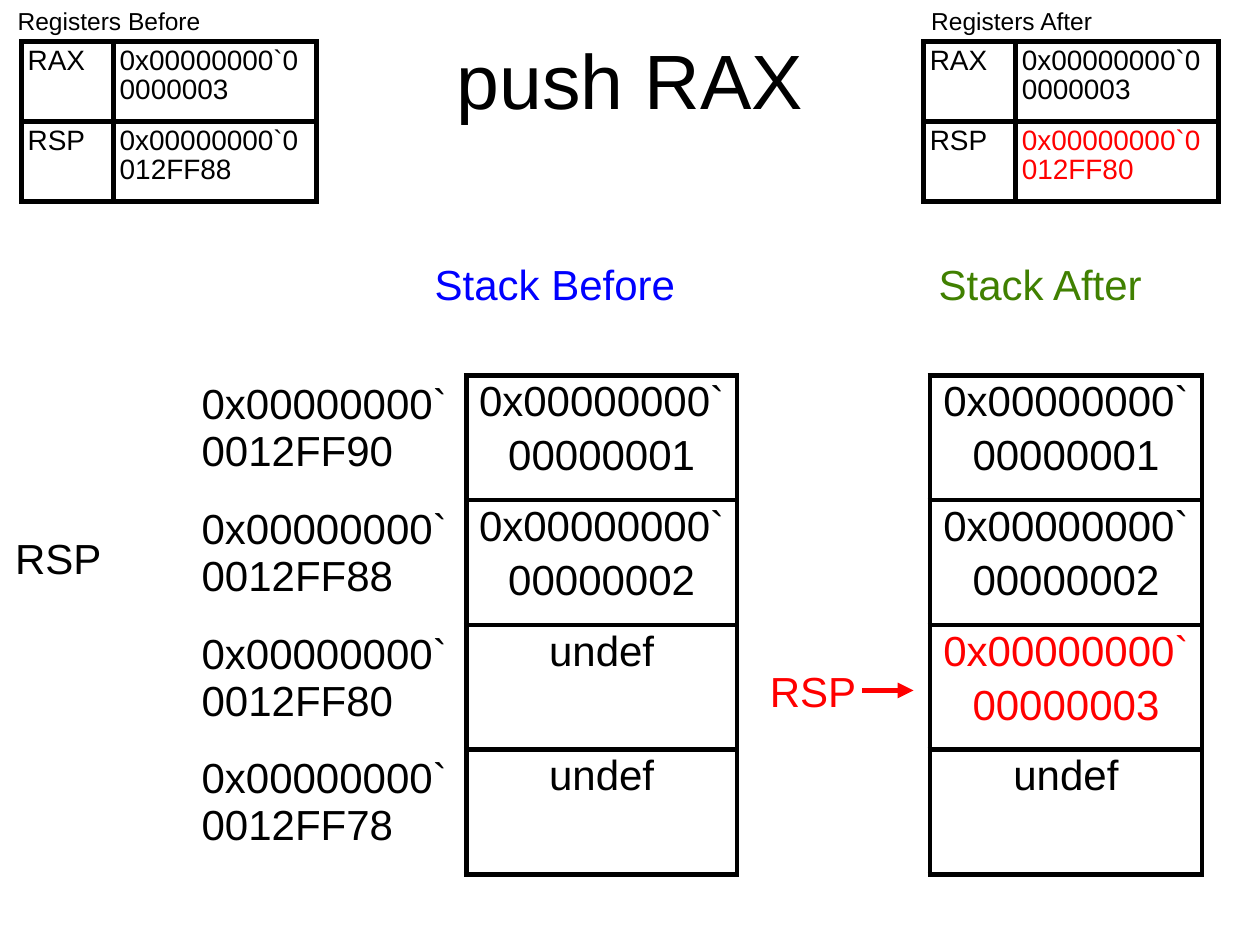
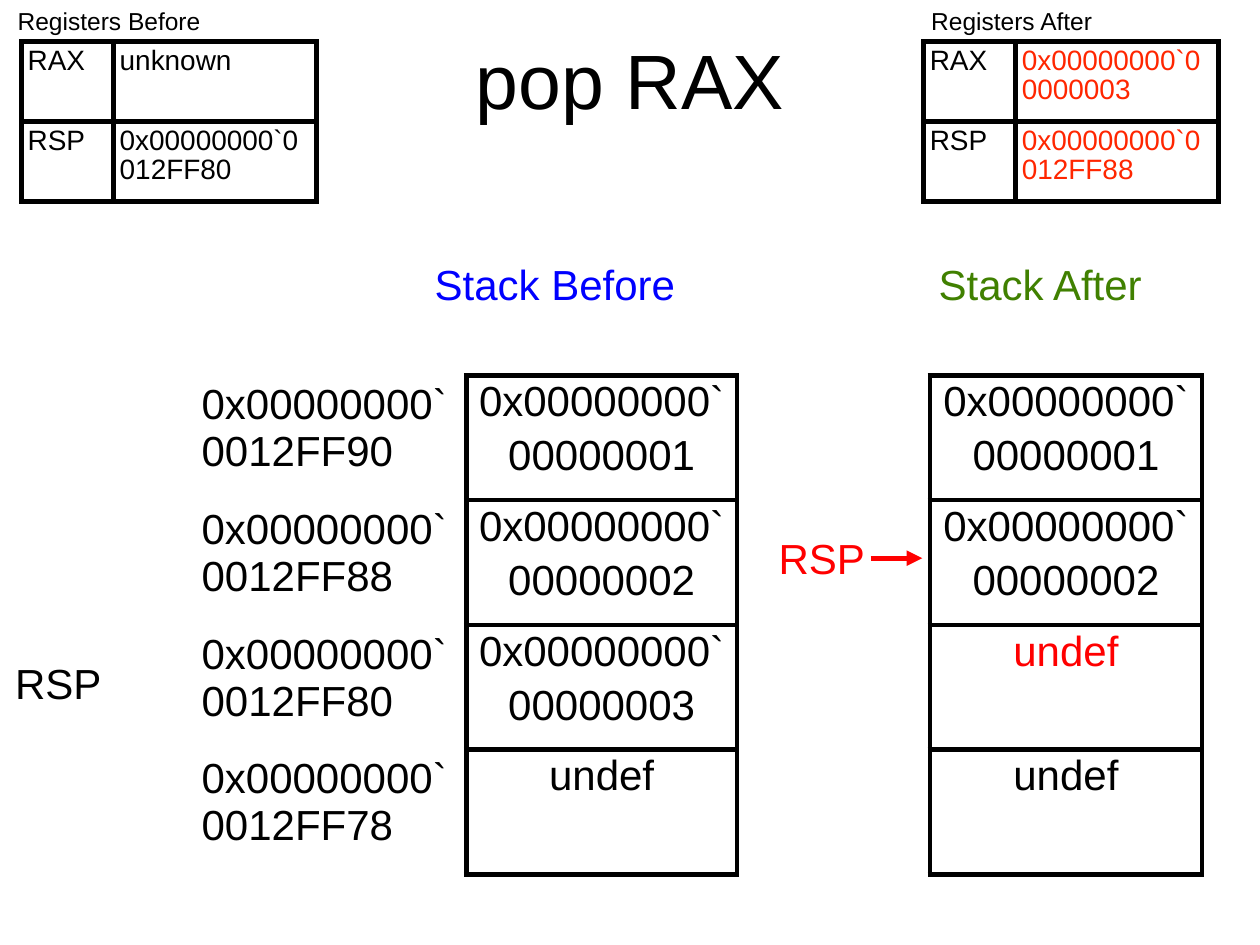
from lxml import etree
from pptx import Presentation
from pptx import util as u
from pptx.dml.color import RGBColor
from pptx.enum import shapes, text
from pptx.oxml.ns import qn

BLACK = RGBColor(0x00, 0x00, 0x00)
BLUE = RGBColor(0x00, 0x00, 0xFF)
GREEN = RGBColor(0x40, 0x80, 0x00)
RED = RGBColor(0xFF, 0x00, 0x00)
SCARLET = RGBColor(0xFF, 0x26, 0x00)
FONT = "Arial"
PAD = u.Inches(0.05)
LINE = u.Pt(3)
LEFT, MID = text.PP_ALIGN.LEFT, text.PP_ALIGN.CENTER

deck = Presentation()
deck.slide_width, deck.slide_height = u.Inches(10), u.Inches(7.5)
CELL = deck.slide_width // 100  # the slide is 100 columns by 75 rows

# Stack rows, in grid cells
TOP, ROW = 29.8, 9.9
HIGH = "0x00000000`"
ADDRS = [HIGH + low for low in ("0012FF90", "0012FF88", "0012FF80", "0012FF78")]
ONE, TWO, THREE = [f"{HIGH}\n0000000{n}" for n in (1, 2, 3)]
UNDEF = "undef"
RAX = HIGH + "00000003"


def write(frame, words, size, color, align=LEFT, space=0, tight=None, pad=PAD):
    """Fill a text frame, one paragraph for each line of words."""
    frame.margin_left = frame.margin_right = pad
    frame.margin_top = frame.margin_bottom = pad
    for i, line in enumerate(words.split("\n")):
        para = frame.add_paragraph() if i else frame.paragraphs[0]
        para.alignment = align
        para.space_before = u.Pt(space)
        para.line_spacing = tight
        run = para.add_run()
        run.text = line
        run.font.name, run.font.size = FONT, u.Pt(size)
        run.font.color.rgb = color


def grid(slide, left, top, widths, height, rows, **style):
    """Add a table; each cell is (words, colour, sides that have a border)."""
    box = [round(v * CELL) for v in (left, top, sum(widths), height * len(rows))]
    table = slide.shapes.add_table(len(rows), len(widths), *box).table
    table.first_row = table.horz_banding = False
    for col, width in zip(table.columns, widths):
        col.width = round(width * CELL)
    for r, row in enumerate(rows):
        for c, (words, color, sides) in enumerate(row):
            cell = table.cell(r, c)
            look = style if sides == "LRTB" else {"size": style["size"]}
            write(cell.text_frame, words, color=color, **look)
            cell.margin_left = cell.margin_right = PAD
            cell.margin_top = cell.margin_bottom = PAD
            props = cell._tc.get_or_add_tcPr()
            for side in "LRTB":
                edge = etree.SubElement(props, qn(f"a:ln{side}"), w=str(LINE))
                if side in sides:
                    fill = etree.SubElement(edge, qn("a:solidFill"))
                    etree.SubElement(fill, qn("a:srgbClr"), val=str(BLACK))
                else:
                    etree.SubElement(edge, qn("a:noFill"))
            cell.fill.background()


# title, registers before, registers after, stack before, stack after,
# colour of changed registers, RSP row before, left and top of RSP after
STEPS = [
    ("push RAX",
     [(RAX, BLACK), (ADDRS[1], BLACK)], [(RAX, BLACK), (ADDRS[2], RED)],
     [ONE, TWO, UNDEF, UNDEF], [ONE, TWO, THREE, UNDEF], 1, (60.6, 52.3)),
    ("pop RAX",
     [("unknown", BLACK), (ADDRS[2], BLACK)], [(RAX, SCARLET), (ADDRS[1], SCARLET)],
     [ONE, TWO, THREE, UNDEF], [ONE, TWO, UNDEF, UNDEF], 2, (61.3, 41.8)),
]

for name, regs, newregs, stack, after, mark, (x, y) in STEPS:
    slide = deck.slides.add_slide(deck.slide_layouts[5])
    title = slide.shapes.title
    title.left, title.top, title.width, title.height = [
        round(v * CELL) for v in (7.5, 2.4, 85, 7.7)]
    write(title.text_frame, name, 44, BLACK, MID, pad=0)
    title.text_frame.vertical_anchor = text.MSO_ANCHOR.MIDDLE
    title.text_frame.auto_size = text.MSO_AUTO_SIZE.NONE

    # Stacks: addresses stand bare beside the first one
    rows = [[(addr, BLACK, "R"), (value, BLACK, "LRTB")]
            for addr, value in zip(ADDRS, stack)]
    grid(slide, 15.5, TOP, (21.5, 21.5), ROW, rows,
         size=24, align=MID, space=6, tight=0.93)
    rows = [[(new, BLACK if new == old else RED, "LRTB")]
            for old, new in zip(stack, after)]
    grid(slide, 73.8, TOP, (21.6,), ROW, rows,
         size=24, align=MID, space=6, tight=0.93)

    # Registers
    for left, values in ((1.7, regs), (73.3, newregs)):
        rows = [[(reg, BLACK, "LRTB"), (*value, "LRTB")]
                for reg, value in zip(("RAX", "RSP"), values)]
        grid(slide, left, 3.3, (7.3, 16.1), 6.35, rows,
             size=16, space=4, tight=0.93)

    # Labels
    for words, left, top, width, height, size, color in (
        ("Stack Before", 34, 20, 21.5, 4.8, 24, BLUE),
        ("Stack After", 74, 20, 18.6, 4.8, 24, GREEN),
        ("RSP", 0.7, TOP + mark * ROW + 2.1, 8, 4.8, 24, BLACK),
        ("RSP", x, y, 8, 4.8, 24, RED),
        ("Registers Before", 0.9, 0, 15.6, 3.2, 14, BLACK),
        ("Registers After", 73.4, 0, 13.9, 3.2, 14, BLACK),
    ):
        box = slide.shapes.add_textbox(
            *[round(v * CELL) for v in (left, top, width, height)])
        write(box.text_frame, words, size, color)
        box.text_frame.word_wrap = False

    # Arrow from the new RSP to the stack
    ends = [round(v * CELL) for v in (x + 7.8, y + 2.5, x + 11.9, y + 2.5)]
    arrow = slide.shapes.add_connector(shapes.MSO_CONNECTOR.STRAIGHT, *ends)
    arrow.line.color.rgb, arrow.line.width = RED, LINE
    etree.SubElement(arrow.line._get_or_add_ln(), qn("a:tailEnd"), type="triangle")
    etree.SubElement(arrow._element.spPr, qn("a:effectLst"))

deck.save("out.pptx")
